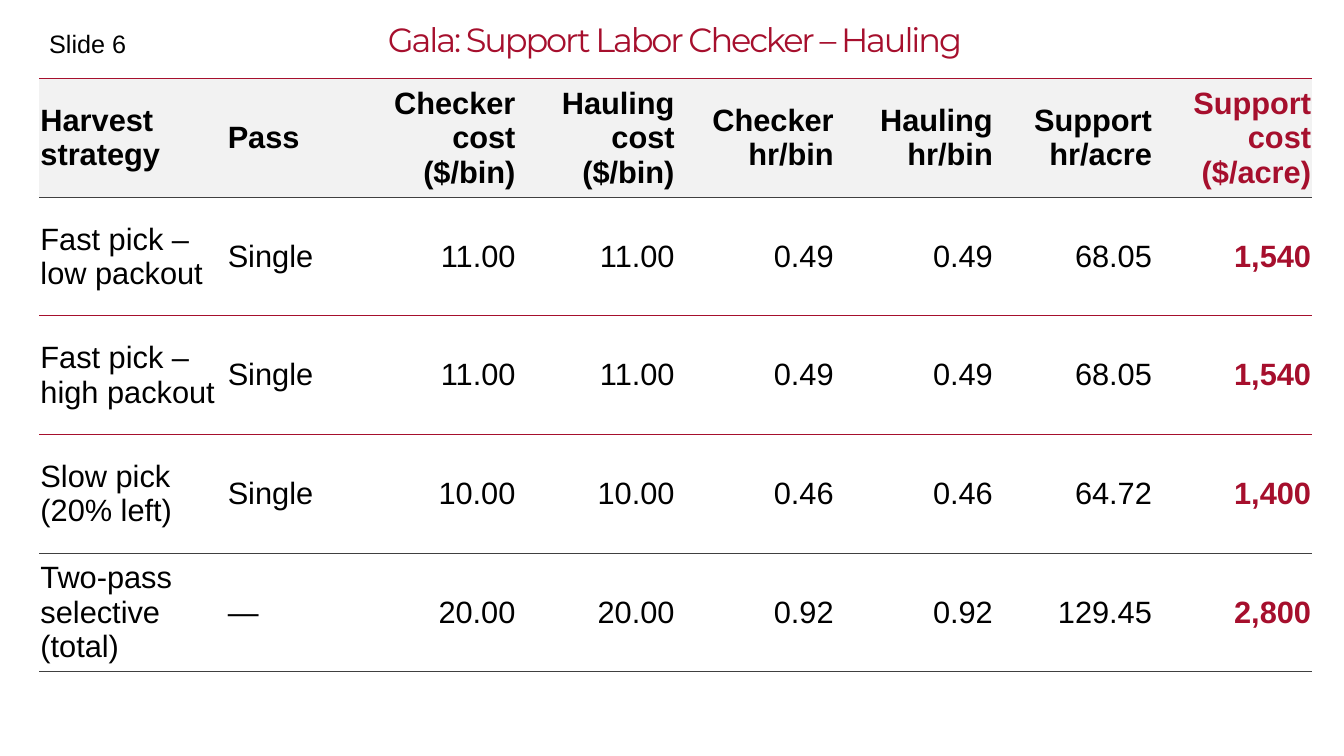
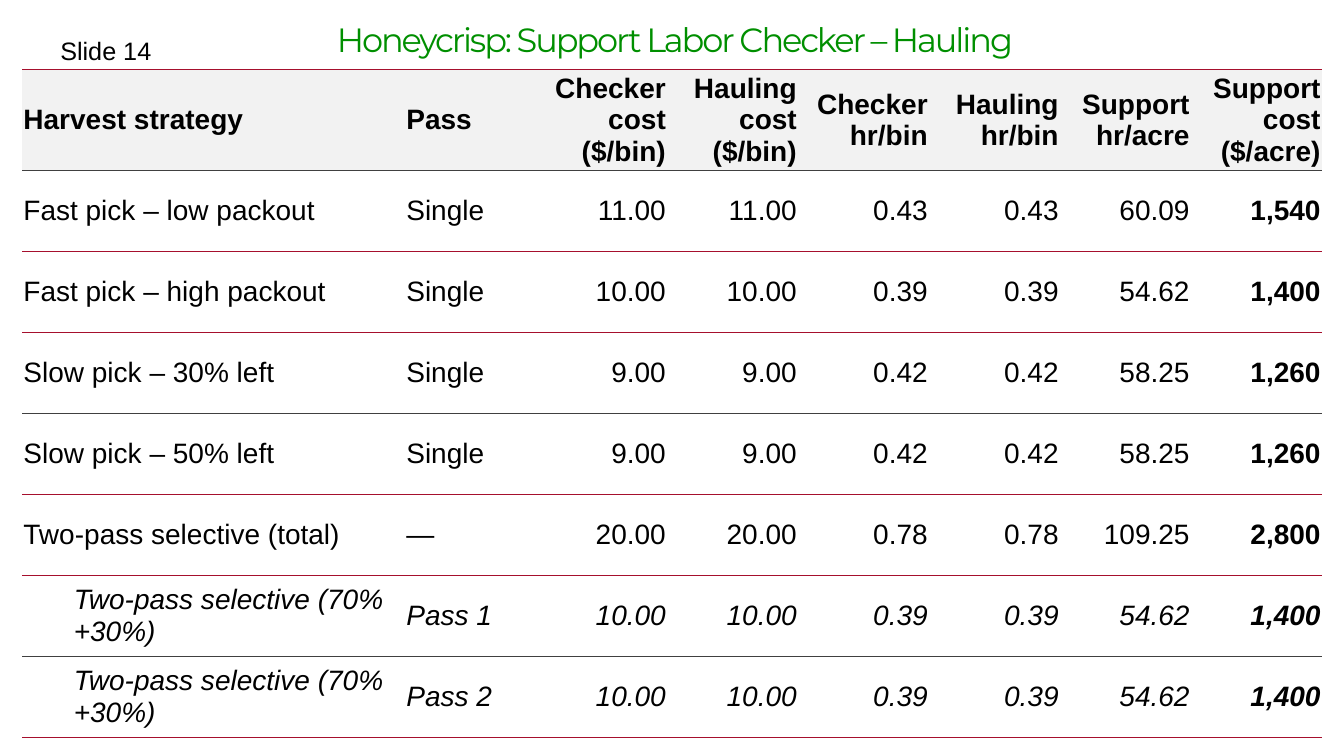
from lxml.etree import SubElement
from pptx import Presentation
from pptx.dml.color import RGBColor
from pptx.enum.text import MSO_ANCHOR as Anchor, MSO_AUTO_SIZE as AutoSize, PP_ALIGN as Align
from pptx.oxml.ns import qn
from pptx.util import Cm, Pt

# Shared look
CRIMSON, GREEN, BLACK = "A60F2D", "008F00", "000000"
DARK, HEADER_FILL = "404040", "F2F2F2"
PLAIN_STYLE = "{2D5ABB26-0587-4C30-8999-92F81FD0307C}"
TITLE_AREA = (0.82, 0.58, 32.54, 1.4)
LABEL_SIZE = (22.86, 2.54)
TEXT_COLUMNS = 2

HEADINGS = ["Harvest strategy", "Pass", "Checker cost ($/bin)", "Hauling cost ($/bin)",
            "Checker hr/bin", "Hauling hr/bin", "Support hr/acre", "Support cost ($/acre)"]

# One entry per slide; rules are the line colours from top to bottom
SLIDES = [
    {
        "title": "Gala: Support Labor Checker – Hauling ", "title_color": CRIMSON,
        "label": "Slide 6", "label_at": (0.99, 0.58),
        "table_at": (0.99, 1.98), "widths": [4.72, 3.3] + [4.01] * 6,
        "header_height": 2.99, "row_height": 2.99,
        "size": 22, "cost_color": CRIMSON, "margin": 0.03,
        "rules": [CRIMSON, DARK, CRIMSON, CRIMSON, DARK, DARK],
        "rows": [
            ["Fast pick – low packout", "Single", "11.00", "11.00", "0.49", "0.49", "68.05", "1,540"],
            ["Fast pick – high packout", "Single", "11.00", "11.00", "0.49", "0.49", "68.05", "1,540"],
            ["Slow pick (20% left)", "Single", "10.00", "10.00", "0.46", "0.46", "64.72", "1,400"],
            ["Two-pass selective (total)", "—", "20.00", "20.00", "0.92", "0.92", "129.45", "2,800"],
        ],
    },
    {
        "title": "Honeycrisp: Support Labor Checker – Hauling ", "title_color": GREEN,
        "label": "Slide 14", "label_at": (1.27, 0.76),
        "table_at": (0.56, 1.75), "widths": [9.65] + [3.3] * 7,
        "header_height": 2.55, "row_height": 2.04,
        "size": 20, "cost_color": BLACK, "margin": 0,
        "rules": [CRIMSON, DARK, CRIMSON, CRIMSON, DARK, CRIMSON, CRIMSON, DARK, CRIMSON],
        "rows": [
            ["Fast pick – low packout", "Single", "11.00", "11.00", "0.43", "0.43", "60.09", "1,540"],
            ["Fast pick – high packout", "Single", "10.00", "10.00", "0.39", "0.39", "54.62", "1,400"],
            ["Slow pick – 30% left", "Single", "9.00", "9.00", "0.42", "0.42", "58.25", "1,260"],
            ["Slow pick – 50% left", "Single", "9.00", "9.00", "0.42", "0.42", "58.25", "1,260"],
            ["Two-pass selective (total)", "—", "20.00", "20.00", "0.78", "0.78", "109.25", "2,800"],
            ["Two-pass selective (70%+30%)", "Pass 1", "10.00", "10.00", "0.39", "0.39", "54.62", "1,400"],
            ["Two-pass selective (70%+30%)", "Pass 2", "10.00", "10.00", "0.39", "0.39", "54.62", "1,400"],
        ],
    },
]


def rgb(color):
    return RGBColor.from_string(color)


def apply(target, values):
    for name, value in values.items():
        setattr(target, name, value)


def write(para, text, color, **font_values):
    span = para.add_run()
    span.text = text
    apply(span.font, font_values)
    span.font.color.rgb = rgb(color)
    return span


def add_title(page, text, color):
    frame = page.shapes.add_textbox(*map(Cm, TITLE_AREA)).text_frame
    apply(frame, {"word_wrap": True, "margin_left": 0, "margin_right": 0,
                  "margin_top": 0, "margin_bottom": 0})
    para = frame.paragraphs[0]
    apply(para, {"alignment": Align.CENTER, "line_spacing": 0.9})
    span = write(para, text, color, size=Pt(24), name="Montserrat")
    span.font._element.set("spc", "-150")


def add_label(page, text, position):
    frame = page.shapes.add_textbox(*map(Cm, position + LABEL_SIZE)).text_frame
    apply(frame, {"word_wrap": False, "auto_size": AutoSize.SHAPE_TO_FIT_TEXT})
    write(frame.paragraphs[0], text, BLACK, size=Pt(18), name="Arial")


def add_rule(cell, side, color):
    line = SubElement(cell._tc.get_or_add_tcPr(), qn(f"a:{side}"), w=str(Pt(1)))
    fill = SubElement(line, qn("a:solidFill"))
    SubElement(fill, qn("a:srgbClr"), val=color)


def indent(para):
    para.level = 1
    properties = para._p.get_or_add_pPr()
    properties.set("marL", str(Cm(1.27)))
    properties.set("indent", "0")


def fill_cell(cell, text, row, column, content):
    is_header, is_cost = row == 0, column == len(HEADINGS) - 1
    is_pass = content["rows"][row - 1][1].startswith("Pass") and not is_header

    # Borders come before the fill in the cell properties
    add_rule(cell, "lnT", content["rules"][row])
    add_rule(cell, "lnB", content["rules"][row + 1])
    if is_header:
        cell.fill.solid()
        cell.fill.fore_color.rgb = rgb(HEADER_FILL)
    else:
        cell.fill.background()

    margin = Cm(content["margin"])
    apply(cell, {"vertical_anchor": Anchor.MIDDLE, "margin_left": Cm(0.03),
                 "margin_right": Cm(0.03), "margin_top": margin, "margin_bottom": margin})
    para = cell.text_frame.paragraphs[0]
    if column >= TEXT_COLUMNS:
        para.alignment = Align.RIGHT
    if is_pass and column == 0:
        indent(para)
    write(para, text, content["cost_color"] if is_cost else BLACK, name="Arial",
          size=Pt(content["size"]), bold=is_header or is_cost, italic=is_pass)


def add_cost_table(page, content):
    rows = [HEADINGS] + content["rows"]
    heights = [content["header_height"]] + [content["row_height"]] * len(content["rows"])
    extent = (sum(content["widths"]), sum(heights))
    table = page.shapes.add_table(len(rows), len(HEADINGS),
                                  *map(Cm, content["table_at"] + extent)).table
    apply(table, {"first_row": False, "horz_banding": False})
    table._tbl.tblPr.find(qn("a:tableStyleId")).text = PLAIN_STYLE

    for column, width in zip(table.columns, content["widths"]):
        column.width = Cm(width)
    for row, height in zip(table.rows, heights):
        row.height = Cm(height)
    for row, texts in enumerate(rows):
        for column, text in enumerate(texts):
            fill_cell(table.cell(row, column), text, row, column, content)


def main():
    deck = Presentation()
    apply(deck, {"slide_width": Cm(33.87), "slide_height": Cm(19.05)})
    for content in SLIDES:
        page = deck.slides.add_slide(deck.slide_layouts[6])
        add_title(page, content["title"], content["title_color"])
        add_cost_table(page, content)
        add_label(page, content["label"], content["label_at"])
    deck.save("out.pptx")


if __name__ == "__main__":
    main()
